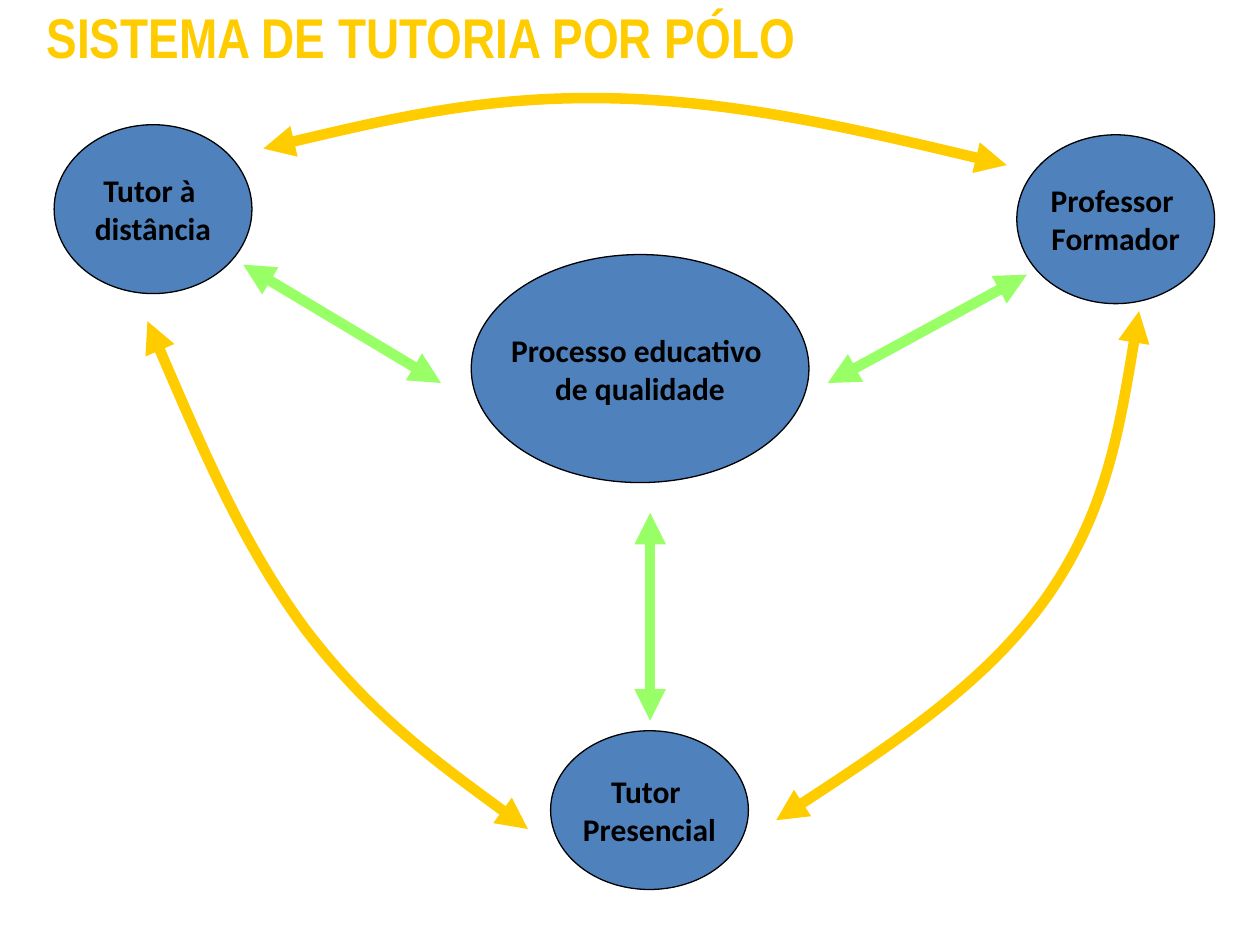
from lxml.etree import SubElement
from pptx import Presentation
from pptx.dml.color import RGBColor
from pptx.enum.shapes import MSO_CONNECTOR, MSO_SHAPE
from pptx.enum.text import MSO_ANCHOR, MSO_AUTO_SIZE, PP_ALIGN
from pptx.oxml.ns import qn
from pptx.util import Inches, Pt

BLUE = "4F81BD"
GREEN = "99FF66"
GOLD = "FFCC00"
BLACK = "000000"

ROLES = [
    (["Processo educativo ", "de qualidade"], 3.74, 2.02, 2.68, 1.81),
    (["Tutor à ", "distância"], 0.43, 0.99, 1.57, 1.34),
    (["Professor ", "Formador"], 8.07, 1.07, 1.57, 1.34),
    (["Tutor ", "Presencial"], 4.37, 5.8, 1.57, 1.26),
]

STRAIGHT_ARROWS = [
    ((1.93, 2.1), (3.5, 3.04)),
    ((5.16, 4.07), (5.16, 5.72)),
    ((6.57, 3.04), (8.15, 2.18)),
]

CURVED_ARROWS = [
    [(2.09, 1.18), (2.97, 0.97), (3.86, 0.76), (4.84, 0.78),
     (5.83, 0.8), (6.91, 1.05), (7.99, 1.31)],
    [(4.19, 6.58), (3.56, 6.12), (2.93, 5.66), (2.42, 4.99),
     (1.92, 4.31), (1.55, 3.43), (1.17, 2.55)],
    [(9.04, 2.47), (8.91, 3.27), (8.78, 4.07), (8.3, 4.75),
     (7.82, 5.42), (6.99, 5.97), (6.16, 6.51)],
]


def color(value):
    return RGBColor.from_string(value)


def format_text(paragraph, font_name, size, value, alignment):
    paragraph.alignment = alignment
    for run in paragraph.runs:
        run.font.name = font_name
        run.font.size = Pt(size)
        run.font.bold = True
        run.font.color.rgb = color(value)


def add_title(slide, text):
    title = slide.shapes.title
    title.left, title.top = Inches(0.27), Inches(-0.03)
    title.width, title.height = Inches(9.29), Inches(0.64)
    text_frame = title.text_frame
    text_frame.text = text
    text_frame.word_wrap = True
    text_frame.auto_size = MSO_AUTO_SIZE.NONE
    text_frame.vertical_anchor = MSO_ANCHOR.MIDDLE
    format_text(text_frame.paragraphs[0], "Arial Narrow", 32, GOLD, PP_ALIGN.JUSTIFY)


def add_role(slide, lines, left, top, width, height):
    shape = slide.shapes.add_shape(
        MSO_SHAPE.OVAL, Inches(left), Inches(top), Inches(width), Inches(height)
    )
    shape.shadow.inherit = False
    shape.fill.solid()
    shape.fill.fore_color.rgb = color(BLUE)
    shape.line.color.rgb = color(BLACK)
    shape.line.width = Pt(0.75)
    text_frame = shape.text_frame
    text_frame.text = "\n".join(lines)
    text_frame.word_wrap = False
    text_frame.vertical_anchor = MSO_ANCHOR.MIDDLE
    for paragraph in text_frame.paragraphs:
        format_text(paragraph, "Calibri", 18, BLACK, PP_ALIGN.CENTER)


def format_arrow(shape, value):
    shape.line.color.rgb = color(value)
    shape.line.width = Pt(6)
    line = shape.element.spPr.find(qn("a:ln"))
    for end in ("a:headEnd", "a:tailEnd"):
        SubElement(line, qn(end), type="triangle")


def add_straight_arrow(slide, start, end):
    connector = slide.shapes.add_connector(
        MSO_CONNECTOR.STRAIGHT, *map(Inches, start + end)
    )
    format_arrow(connector, GREEN)
    SubElement(connector.element.spPr, qn("a:effectLst"))


def bend_segments(shape):
    path = next(shape.element.iter(qn("a:path")))
    segments = path.findall(qn("a:lnTo"))
    for first in range(0, len(segments), 3):
        curve = SubElement(path, qn("a:cubicBezTo"))
        for segment in segments[first:first + 3]:
            curve.append(segment[0])
            path.remove(segment)


def add_curved_arrow(slide, points):
    start, *others = [(Inches(x), Inches(y)) for x, y in points]
    builder = slide.shapes.build_freeform(*start)
    builder.add_line_segments(others, close=False)
    shape = builder.convert_to_shape()
    bend_segments(shape)
    shape.shadow.inherit = False
    shape.fill.background()
    format_arrow(shape, GOLD)


def main():
    presentation = Presentation()
    presentation.slide_width = Inches(10)
    presentation.slide_height = Inches(7.5)
    slide = presentation.slides.add_slide(presentation.slide_layouts[5])
    for role in ROLES:
        add_role(slide, *role)
    for start, end in STRAIGHT_ARROWS:
        add_straight_arrow(slide, start, end)
    for points in CURVED_ARROWS:
        add_curved_arrow(slide, points)
    add_title(slide, "SISTEMA DE TUTORIA POR PÓLO")
    presentation.save("out.pptx")


if __name__ == "__main__":
    main()
